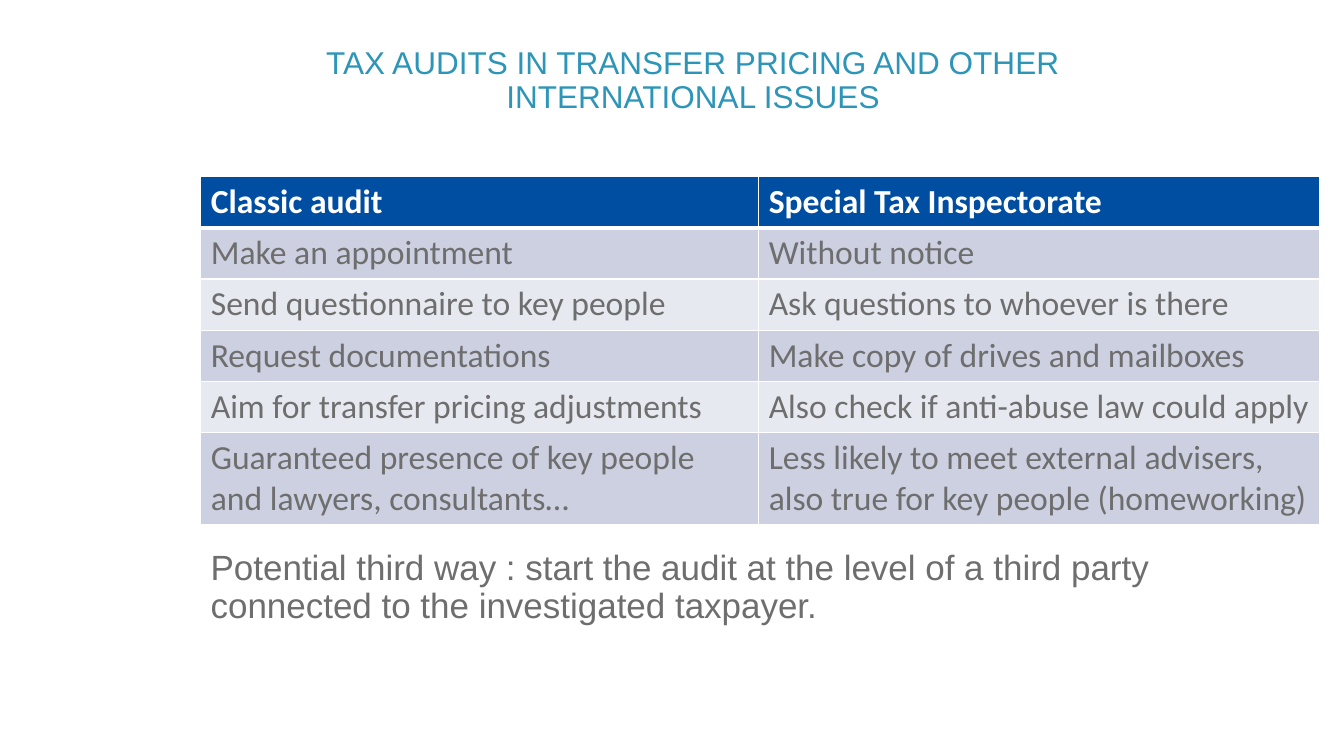
from lxml.etree import fromstring
from pptx import Presentation
from pptx.dml.color import RGBColor
from pptx.enum.text import MSO_ANCHOR, PP_ALIGN
from pptx.oxml.ns import nsdecls
from pptx.util import Cm, Pt

# Content
TITLE = "TAX AUDITS IN TRANSFER PRICING AND OTHER INTERNATIONAL ISSUES"
AUDIT_ROWS = [
    ("Classic audit", "Special Tax Inspectorate"),
    ("Make an appointment", "Without notice"),
    ("Send questionnaire to key people", "Ask questions to whoever is there"),
    ("Request documentations", "Make copy of drives and mailboxes"),
    ("Aim for transfer pricing adjustments", "Also check if anti-abuse law could apply"),
    ("Guaranteed presence of key people and lawyers, consultants…",
     "Less likely to meet external advisers, also true for key people (homeworking)"),
]
THIRD_WAY = ("Potential third way : start the audit at the level of a third party "
             "connected to the investigated taxpayer.")

# Colours and formats
WHITE = RGBColor(0xFF, 0xFF, 0xFF)
TEAL = RGBColor(0x2C, 0x95, 0xB8)
GREY = RGBColor(0x6E, 0x6E, 0x6E)
HEADER_BLUE = RGBColor(0x00, 0x4E, 0xA2)
BANDS = [RGBColor(0xE7, 0xE9, 0xF0), RGBColor(0xCC, 0xD0, 0xE0)]

TITLE_FONT = {"name": "Arial", "size": Pt(22.5)}
NOTE_FONT = {"name": "Arial", "size": Pt(25)}
HEADER_FONT = {"name": "Calibri", "size": Pt(24), "bold": True}
CELL_FONT = {"name": "Calibri", "size": Pt(24), "bold": False}

# Layout in centimetres
LEFT = 5.06
COLUMN_WIDTHS = [14.06, 14.14]
TABLE_TOP = 4.45
ROW_HEIGHTS = [1.29] * 5 + [2.32]


def format_paragraph(paragraph, font_format, color):
    for attribute, value in font_format.items():
        setattr(paragraph.font, attribute, value)
    paragraph.font.color.rgb = color


def add_text(slide, text, box, font_format, color, alignment, anchor):
    shape = slide.shapes.add_textbox(*(Cm(length) for length in box))
    frame = shape.text_frame
    frame.word_wrap = True
    frame.vertical_anchor = anchor
    paragraph = frame.paragraphs[0]
    paragraph.text = text
    paragraph.alignment = alignment
    paragraph.line_spacing = 0.9
    format_paragraph(paragraph, font_format, color)


def add_borders(cell, widths):
    properties = cell._tc.get_or_add_tcPr()
    for index, (side, width) in enumerate(widths.items()):
        properties.insert(index, fromstring(
            f'<a:ln{side} {nsdecls("a")} w="{Pt(width)}"><a:solidFill>'
            f'<a:srgbClr val="{WHITE}"/></a:solidFill></a:ln{side}>'))


def add_audit_table(slide):
    table = slide.shapes.add_table(
        len(AUDIT_ROWS), len(COLUMN_WIDTHS), Cm(LEFT), Cm(TABLE_TOP),
        Cm(sum(COLUMN_WIDTHS)), Cm(sum(ROW_HEIGHTS))).table
    for column, width in zip(table.columns, COLUMN_WIDTHS):
        column.width = Cm(width)
    for row, height in zip(table.rows, ROW_HEIGHTS):
        row.height = Cm(height)
    for row_index, texts in enumerate(AUDIT_ROWS):
        is_header = row_index == 0
        for column_index, text in enumerate(texts):
            cell = table.cell(row_index, column_index)
            cell.text = text
            cell.fill.solid()
            cell.fill.fore_color.rgb = HEADER_BLUE if is_header else BANDS[row_index % 2]
            format_paragraph(cell.text_frame.paragraphs[0],
                             HEADER_FONT if is_header else CELL_FONT,
                             WHITE if is_header else GREY)
            add_borders(cell, {"L": 1, "R": 1, "T": 3 if row_index == 1 else 1,
                               "B": 3 if is_header else 1})


def main():
    presentation = Presentation()
    presentation.slide_width = Cm(33.87)
    presentation.slide_height = Cm(19.05)
    slide = presentation.slides.add_slide(presentation.slide_layouts[6])

    # Title, comparison table and closing remark
    add_text(slide, TITLE, (LEFT, 1.08, 24.82, 1.96), TITLE_FONT, TEAL,
             PP_ALIGN.CENTER, MSO_ANCHOR.MIDDLE)
    add_audit_table(slide)
    add_text(slide, THIRD_WAY, (LEFT, 13.74, 27.91, 2.3), NOTE_FONT, GREY,
             PP_ALIGN.LEFT, MSO_ANCHOR.TOP)

    presentation.save("out.pptx")


if __name__ == "__main__":
    main()
